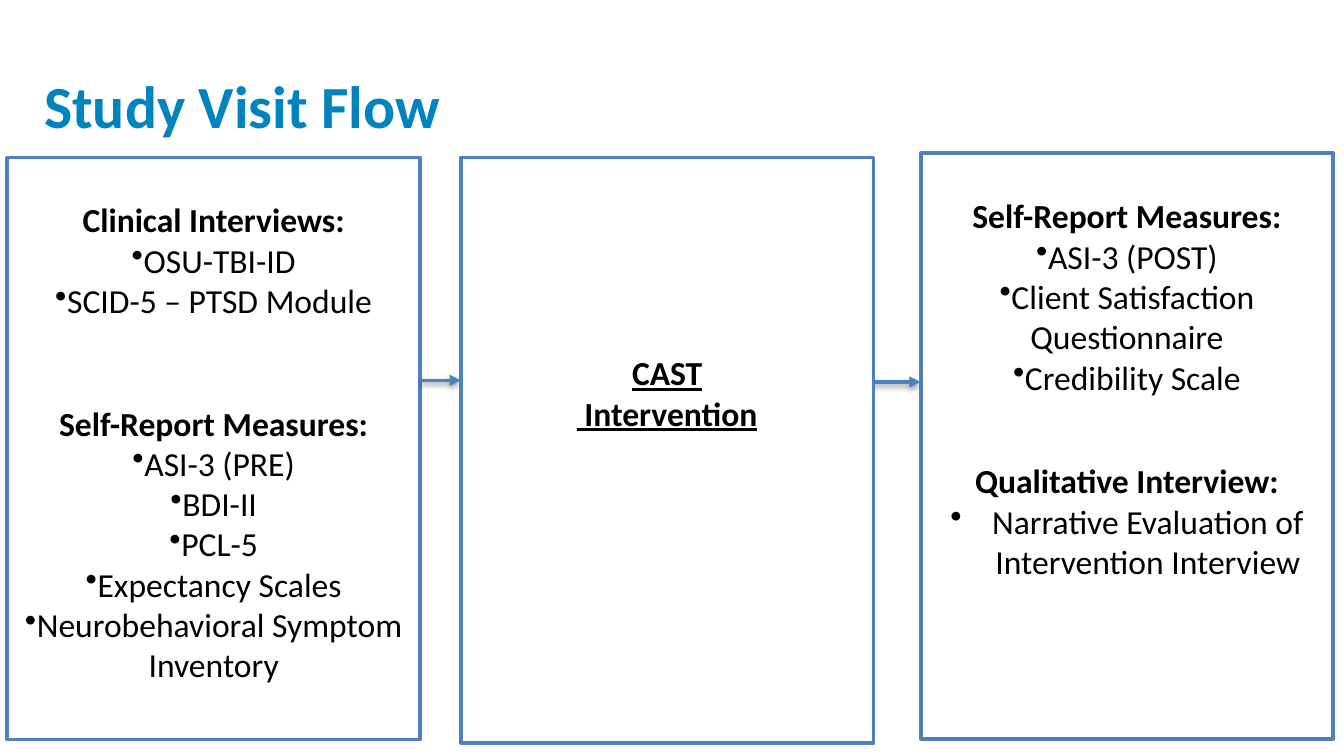
import pptx
import pptx.dml.color
import pptx.enum.dml
import pptx.enum.shapes
import pptx.enum.text
import pptx.oxml
import pptx.oxml.ns
import pptx.util
from pptx.util import Cm

BLUE = "4F81BD"
BOX_WIDTH = 7.8
CENTER = pptx.enum.text.PP_ALIGN.CENTER
LEFT = pptx.enum.text.PP_ALIGN.LEFT


def rgb(value):
    return pptx.dml.color.RGBColor.from_string(value)


def add_bullet(p, indent):
    pPr = p._p.get_or_add_pPr()
    pPr.set("marL", str(Cm(indent)))
    pPr.set("indent", str(-Cm(indent)))
    bullet = pptx.oxml.parse_xml(
        f'<a:buChar {pptx.oxml.ns.nsdecls("a")} char="•"/>')
    pPr.append(bullet)


def add_text(tf, text, size=18, color="000000", bold=False, underline=False,
             align=CENTER, before=0, spacing=None, bullet=False, indent=0):
    p = tf.paragraphs[0]
    if p.runs:
        p = tf.add_paragraph()
    p.alignment = align
    p.space_before = pptx.util.Pt(before)
    if spacing:
        p.line_spacing = spacing
    if bullet:
        add_bullet(p, indent)
    r = p.add_run()
    r.text = text
    r.font.name = "Calibri"
    r.font.size = pptx.util.Pt(size)
    r.font.bold = bold
    r.font.underline = underline
    r.font.color.rgb = rgb(color)


def add_title(s, text):
    sp = s.shapes.title
    sp.left, sp.top, sp.width, sp.height = Cm(0.58), Cm(1.57), Cm(23.57), Cm(1.07)
    tf = sp.text_frame
    tf.auto_size = pptx.enum.text.MSO_AUTO_SIZE.NONE
    tf.vertical_anchor = pptx.enum.text.MSO_ANCHOR.MIDDLE
    add_text(tf, text, size=32, color="0083BE", bold=True, align=LEFT, spacing=0.8)


def add_box(s, left, top, height, inset):
    sp = s.shapes.add_shape(pptx.enum.shapes.MSO_SHAPE.RECTANGLE,
                            Cm(left), Cm(top), Cm(BOX_WIDTH), Cm(height))
    sp.shadow.inherit = False
    sp.fill.solid()
    sp.fill.fore_color.rgb = rgb("FFFFFF")
    sp.line.color.rgb = rgb(BLUE)
    sp.line.width = pptx.util.Pt(2)
    tf = sp.text_frame
    tf.word_wrap = True
    tf.vertical_anchor = pptx.enum.text.MSO_ANCHOR.TOP
    tf.margin_top = Cm(inset)
    return tf


def add_section(tf, heading, items, before=0, indent=0):
    add_text(tf, heading, bold=True, before=before)
    for item in items:
        add_text(tf, item, bullet=True, indent=indent)


def add_arrow(s, start, end, y):
    line = s.shapes.add_connector(pptx.enum.shapes.MSO_CONNECTOR.STRAIGHT,
                                  Cm(start), Cm(y), Cm(end), Cm(y)).line
    line.color.rgb = rgb(BLUE)
    line.width = pptx.util.Pt(2)
    line._get_or_add_ln().append(pptx.oxml.parse_xml(
        f'<a:tailEnd {pptx.oxml.ns.nsdecls("a")} type="triangle"/>'))


def main():
    prs = pptx.Presentation()
    prs.slide_width, prs.slide_height = Cm(25.4), Cm(14.29)
    s = prs.slides.add_slide(prs.slide_layouts[5])
    add_title(s, "Study Visit Flow")

    tf = add_box(s, 0.14, 2.98, 11, 0.79)
    add_section(tf, "Clinical Interviews:", ["OSU-TBI-ID", "SCID-5 – PTSD Module"])
    add_section(tf, "Self-Report Measures:",
                ["ASI-3 (PRE)", "BDI-II", "PCL-5", "Expectancy Scales",
                 "Neurobehavioral Symptom Inventory"], before=44)

    add_arrow(s, 7.94, 8.71, 7.19)
    add_arrow(s, 16.38, 17.4, 7.22)

    tf = add_box(s, 8.71, 2.98, 11.07, 3.68)
    for text in ("CAST", " Intervention"):
        add_text(tf, text, bold=True, underline=True)

    tf = add_box(s, 17.4, 2.9, 11.07, 0.79)
    add_section(tf, "Self-Report Measures:",
                ["ASI-3 (POST)", "Client Satisfaction Questionnaire",
                 "Credibility Scale"])
    add_section(tf, "Qualitative Interview:",
                ["Narrative Evaluation of Intervention Interview"],
                before=34, indent=0.79)

    prs.save("out.pptx")


if __name__ == "__main__":
    main()
